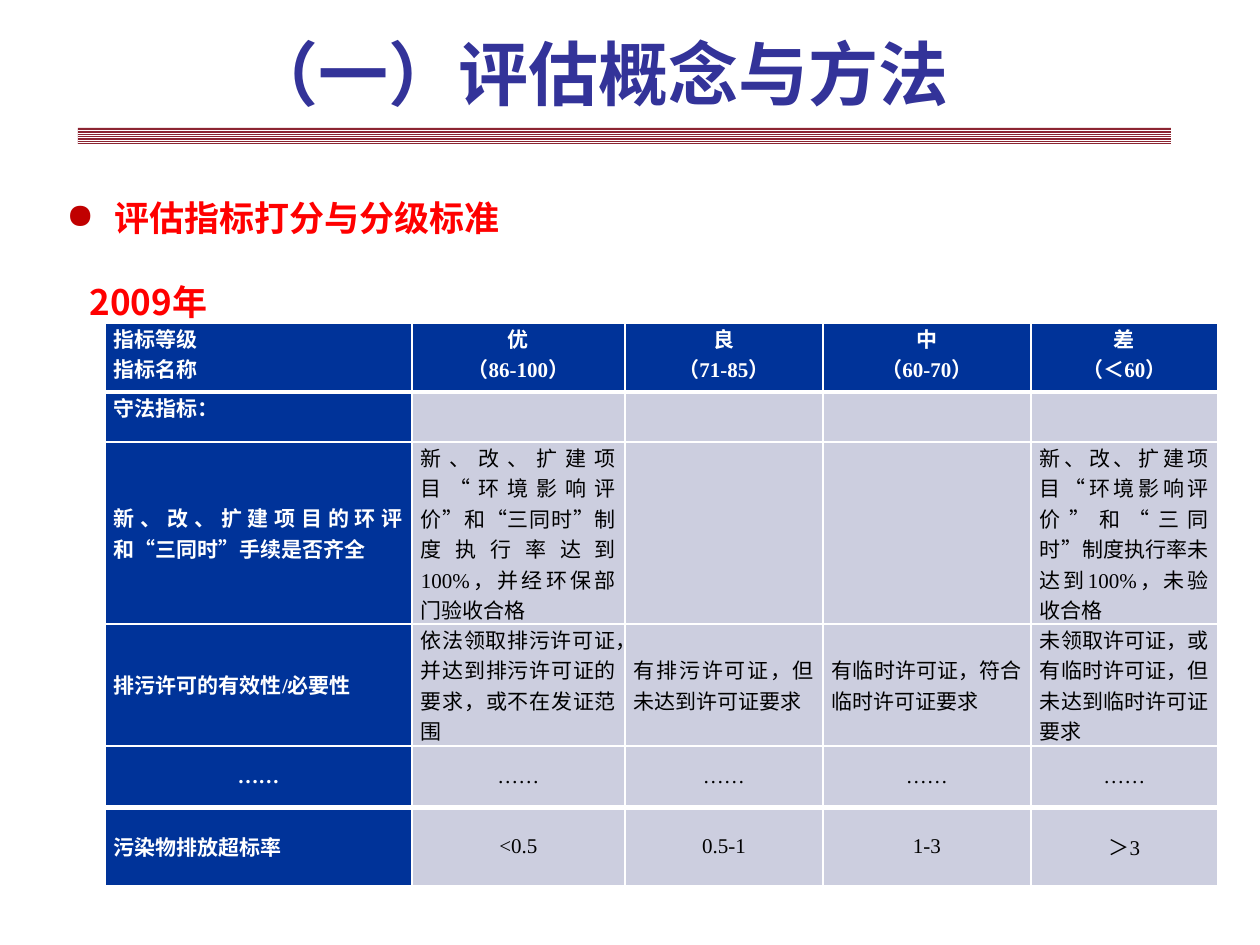
from lxml.etree import SubElement
from pptx import Presentation
from pptx.dml.color import RGBColor
from pptx.enum.dml import MSO_PATTERN
from pptx.enum.shapes import MSO_SHAPE
from pptx.enum.text import MSO_ANCHOR, PP_ALIGN
from pptx.oxml.ns import qn
from pptx.util import Inches, Pt

SANS = "Noto Sans CJK SC"
SERIF = "Times New Roman"
WHITE = RGBColor(0xFF, 0xFF, 0xFF)
BLACK = RGBColor(0, 0, 0)
RED = RGBColor(0xFF, 0, 0)
INDIGO = RGBColor(0x33, 0x33, 0x99)
WINE = RGBColor(0x8C, 0x25, 0x32)
NAVY = RGBColor(0, 0x33, 0x99)
GREY = RGBColor(0xCC, 0xCE, 0xDF)


def px(*nums):
    """Turn pixels, 126 to the inch, into EMU."""
    return [Inches(n / 126) for n in nums]


def style(frame, size, color, bold, latin=SANS):
    for para in frame.paragraphs:
        for run in para.runs:
            font = run.font
            font.size, font.bold, font.name = Pt(size), bold, latin
            font.color.rgb = color
            SubElement(font._element, qn("a:ea"), typeface=SANS)


prs = Presentation()
prs.slide_width, prs.slide_height = px(1260, 945)
slide = prs.slides.add_slide(prs.slide_layouts[5])

# Title and striped rule
title = slide.shapes.title
title.left, title.top, title.width, title.height = px(233, 18, 731, 110)
frame = title.text_frame
frame.text = "（一）评估概念与方法"
frame.vertical_anchor = MSO_ANCHOR.MIDDLE
frame.paragraphs[0].alignment = PP_ALIGN.CENTER
style(frame, 40, INDIGO, True)

rule = slide.shapes.add_shape(MSO_SHAPE.RECTANGLE, *px(78, 128, 1093, 16))
rule.shadow.inherit = False
rule.line.fill.background()
rule.fill.patterned()
rule.fill.pattern = MSO_PATTERN.LIGHT_HORIZONTAL
rule.fill.fore_color.rgb = WHITE
rule.fill.back_color.rgb = WINE

# Heading and year
body = slide.shapes.add_textbox(*px(54, 175, 1181, 753))
frame = body.text_frame
frame.word_wrap = True
frame.text = "评估指标打分与分级标准\n2009年"
head, year = frame.paragraphs
head.line_spacing, year.line_spacing = Pt(33), 1.5
head.space_after = year.space_after = Pt(12)
style(frame, 20, RED, True)

props = head._p.get_or_add_pPr()
props.set("marL", str(px(48)[0]))
props.set("indent", str(px(-48)[0]))
tint = SubElement(props, qn("a:buClr"))
SubElement(tint, qn("a:srgbClr"), val="C00000")
SubElement(props, qn("a:buChar"), char="●")
year._p.get_or_add_pPr().set("marL", str(px(23)[0]))

# Grading table
ROWS = [
    ["指标等级\n指标名称", "优\n（86-100）", "良\n（71-85）", "中\n（60-70）", "差\n（＜60）"],
    ["守法指标：", "", "", "", ""],
    ["新、改、扩建项目的环评和“三同时”手续是否齐全",
     "新、改、扩建项目“环境影响评价”和“三同时”制度执行率达到100%，并经环保部门验收合格",
     "", "",
     "新、改、扩建项目“环境影响评价”和“三同时”制度执行率未达到100%，未验收合格"],
    ["排污许可的有效性/必要性",
     "依法领取排污许可证，并达到排污许可证的要求，或不在发证范围",
     "有排污许可证，但未达到许可证要求",
     "有临时许可证，符合临时许可证要求",
     "未领取许可证，或有临时许可证，但未达到临时许可证要求"],
    ["……"] * 5,
    ["污染物排放超标率", "<0.5", "0.5-1", "1-3", "＞3"],
]
WIDTHS = [307, 213, 198, 208, 187]
HEIGHTS = [69, 50, 182, 122, 62, 78]
THICK = {(0, "lnB"), (1, "lnT"), (4, "lnB"), (5, "lnT")}

table = slide.shapes.add_table(
    len(ROWS), len(WIDTHS), *px(105, 323, sum(WIDTHS), sum(HEIGHTS))).table
for col, wide in zip(table.columns, px(*WIDTHS)):
    col.width = wide
for row, high in zip(table.rows, px(*HEIGHTS)):
    row.height = high

for r, texts in enumerate(ROWS):
    for c, text in enumerate(texts):
        cell = table.cell(r, c)
        cell.margin_left = cell.margin_right = px(9)[0]
        cell.margin_top = cell.margin_bottom = 0
        cell.vertical_anchor = MSO_ANCHOR.TOP if r < 2 else MSO_ANCHOR.MIDDLE
        for side in ("lnL", "lnR", "lnT", "lnB"):
            width = Pt(3 if (r, side) in THICK else 1)
            edge = SubElement(cell._tc.get_or_add_tcPr(), qn(f"a:{side}"), w=str(width))
            SubElement(SubElement(edge, qn("a:solidFill")), qn("a:srgbClr"), val=str(WHITE))
        label = r == 0 or c == 0
        cell.fill.solid()
        cell.fill.fore_color.rgb = NAVY if label else GREY
        cell.text_frame.text = text
        flush = r in (1, 2, 3) or (c == 0 and r != 4)
        for para in cell.text_frame.paragraphs:
            para.alignment = PP_ALIGN.JUSTIFY if flush else PP_ALIGN.CENTER
        style(cell.text_frame, 12, WHITE if label else BLACK, label, SERIF)

prs.save("out.pptx")
